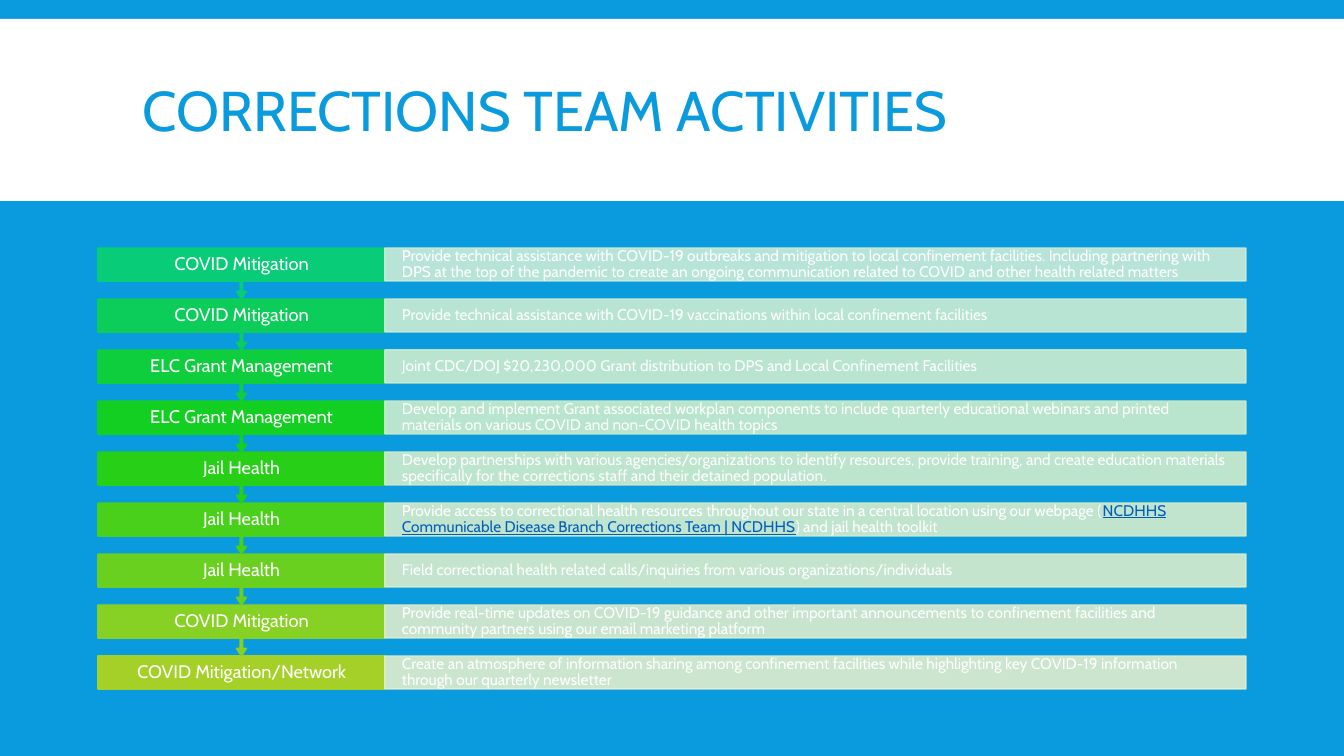
from lxml.etree import SubElement
from pptx import Presentation
from pptx.dml.color import RGBColor
from pptx.enum.shapes import MSO_SHAPE
from pptx.enum.text import MSO_ANCHOR, PP_ALIGN
from pptx.oxml.ns import qn
from pptx.util import Emu, Pt

SCALE = 914400 / 100.8
BLUE, WHITE, LINK = "099BDD", "FFFFFF", "005DBA"

# Row grid
TOP, STEP, HIGH = 248, 51, 33
LEFT, SPLIT, RIGHT = 98, 385, 1246

# Label, label fill, detail fill, detail runs (every second run is a link)
ROWS = [
    ("COVID Mitigation", "08CC78", "CCECD7", [
        "Provide technical assistance with COVID-19 outbreaks and mitigation to local "
        "confinement facilities. Including partnering with DPS at the top of the pandemic "
        "to create an ongoing communication related to COVID and other health related matters"]),
    ("COVID Mitigation", "0CCD5A", "CCECD3", [
        "Provide technical assistance with COVID-19 vaccinations within local "
        "confinement facilities"]),
    ("ELC Grant Management", "0FCE3D", "CCEDCF", [
        "Joint CDC/DOJ $20,230,000 Grant distribution to DPS and Local Confinement Facilities"]),
    ("ELC Grant Management", "13CF22", "CDEDCC", [
        "Develop and implement Grant associated workplan components to include quarterly "
        "educational webinars and printed materials on various COVID and non-COVID health topics"]),
    ("Jail Health", "27CF17", "D1EDCC", [
        "Develop partnerships with various agencies/organizations to identify resources, "
        "provide training, and create education materials specifically for the corrections "
        "staff and their detained population."]),
    ("Jail Health", "48D01B", "D5EDCD", [
        "Provide access to correctional health resources throughout our state in a central "
        "location using our webpage (",
        "NCDHHS Communicable Disease Branch Corrections Team | NCDHHS",
        ") and jail health toolkit"]),
    ("Jail Health", "69D01F", "D9EDCD", [
        "Field correctional health related calls/inquiries from various "
        "organizations/individuals"]),
    ("COVID Mitigation", "87D024", "DDEDCD", [
        "Provide real-time updates on COVID-19 guidance and other important announcements to "
        "confinement facilities and community partners using our email marketing platform"]),
    ("COVID Mitigation/Network", "A5D028", "E1EECD", [
        "Create an atmosphere of information sharing among confinement facilities while "
        "highlighting key COVID-19 information through our quarterly newsletter"]),
]


def px(size):
    return Emu(round(size * SCALE))


def paint(color, code):
    color.rgb = RGBColor.from_string(code)


def style(item, values):
    for name, value in values.items():
        setattr(item, name, value)


def write(shape, runs, size, color, align, space, inset):
    """Fill a shape with one paragraph, marking every second run as a link."""
    across, down = map(px, inset)
    frame = shape.text_frame
    style(frame, {"word_wrap": True, "vertical_anchor": MSO_ANCHOR.MIDDLE,
                  "margin_left": across, "margin_right": across,
                  "margin_top": down, "margin_bottom": down})
    para = frame.paragraphs[0]
    style(para, {"alignment": align, "line_spacing": space})
    for i, text in enumerate(runs):
        run = para.add_run()
        run.text = text
        link = i % 2 == 1
        style(run.font, {"name": "Cabin", "size": Pt(size), "underline": link})
        paint(run.font.color, LINK if link else color)


def block(slide, kind, box, fill, edge=True):
    shape = slide.shapes.add_shape(kind, *map(px, box))
    shape.shadow.inherit = False
    shape.fill.solid()
    paint(shape.fill.fore_color, fill)
    if edge:
        shape.line.width = Pt(1)
        paint(shape.line.color, fill)
    else:
        shape.line.fill.background()
    return shape


def fade(shape, share):
    """Set the opacity of fill and line in percent."""
    for color in list(shape._element.spPr.iter(qn("a:srgbClr"))):
        SubElement(color, qn("a:alpha")).set("val", str(share * 1000))


def label(slide, top, text, fill, last):
    kind = MSO_SHAPE.RECTANGLE if last else MSO_SHAPE.DOWN_ARROW_CALLOUT
    box = (LEFT, top, SPLIT - LEFT, HIGH if last else STEP)
    shape = block(slide, kind, box, fill)
    if not last:
        for i, value in enumerate((0.05, 0.1, 0.15, 0.65)):
            shape.adjustments[i] = value
    write(shape, [text], 13, WHITE, PP_ALIGN.CENTER, 0.9, (20, 10))


def detail(slide, top, runs, fill):
    box = (SPLIT, top, RIGHT - SPLIT, HIGH)
    shape = block(slide, MSO_SHAPE.RECTANGLE, box, fill)
    fade(shape, 90)
    write(shape, runs, 11, WHITE, PP_ALIGN.LEFT, 0.9, (17, 15))


def main():
    deck = Presentation()
    style(deck, {"slide_width": px(1344), "slide_height": px(756)})
    slide = deck.slides.add_slide(deck.slide_layouts[6])

    # Background and title band
    back = slide.background.fill
    back.solid()
    paint(back.fore_color, BLUE)
    block(slide, MSO_SHAPE.RECTANGLE, (0, 19, 1344, 182), WHITE, edge=False)
    title = slide.shapes.add_textbox(*map(px, (133, 31, 1079, 166)))
    write(title, ["CORRECTIONS TEAM ACTIVITIES"], 40, BLUE, PP_ALIGN.LEFT, 0.85, (10, 5))

    # Activity rows, stacked from the bottom up
    end = len(ROWS) - 1
    for i in range(end, -1, -1):
        text, dark, light, runs = ROWS[i]
        top = TOP + i * STEP
        label(slide, top, text, dark, i == end)
        detail(slide, top, runs, light)

    deck.save("out.pptx")


if __name__ == "__main__":
    main()
